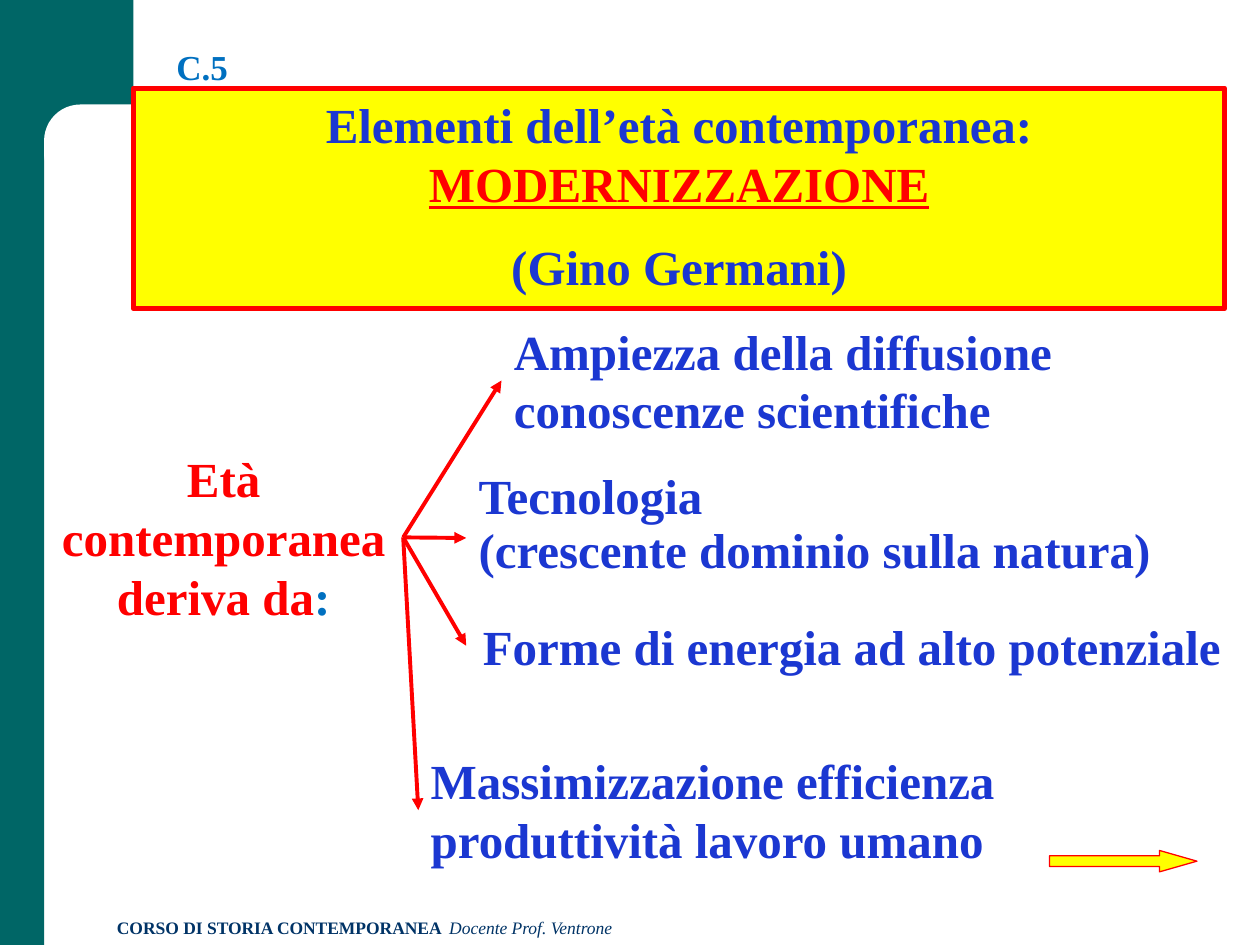
from lxml.etree import SubElement
from pptx import Presentation
from pptx.dml.color import RGBColor
from pptx.enum.shapes import MSO_CONNECTOR as Connector, MSO_SHAPE as Shape
from pptx.enum.text import MSO_ANCHOR as Anchor, MSO_AUTO_SIZE as AutoSize, PP_ALIGN as Align
from pptx.oxml.ns import qn
from pptx.util import Inches, Pt

GREEN, WHITE, YELLOW = "006666", "FFFFFF", "FFFF00"
BLUE, RED, SKY, NAVY = "1B37D1", "FF0000", "0070C0", "003366"
COLS, ROWS = 100, 75


def color(value):
    return RGBColor.from_string(value)


class Deck:
    font = "Times New Roman"
    size = 28

    def __init__(self):
        self.prs = Presentation()
        self.prs.slide_width, self.prs.slide_height = Inches(10), Inches(7.5)
        self.cell_w = self.prs.slide_width / COLS
        self.cell_h = self.prs.slide_height / ROWS
        self.slide = self.prs.slides.add_slide(self.prs.slide_layouts[5])

    def place(self, col, row, cols, rows):
        return (round(col * self.cell_w), round(row * self.cell_h),
                round(cols * self.cell_w), round(rows * self.cell_h))

    def set_text(self, shape, paragraphs, size=None, align=Align.LEFT, spacing=None,
                 anchor=Anchor.TOP, wrap=True):
        """Each paragraph is a list of (text, colour, style letters b, i, u)."""
        size = size or self.size
        frame = shape.text_frame
        frame.auto_size, frame.word_wrap = AutoSize.NONE, wrap
        frame.vertical_anchor = anchor
        for i, runs in enumerate(paragraphs):
            paragraph = frame.add_paragraph() if i else frame.paragraphs[0]
            paragraph.alignment = align
            paragraph.space_before = Pt(size / 2 if i else 0)
            if spacing:
                paragraph.line_spacing = spacing
            for text, fill, style in runs:
                run = paragraph.add_run()
                run.text = text
                font = run.font
                font.name, font.size = self.font, Pt(size)
                font.bold, font.italic = "b" in style, "i" in style
                font.underline = "u" in style
                font.color.rgb = color(fill)

    def title(self, area, text):
        title = self.slide.shapes.title
        title.left, title.top, title.width, title.height = self.place(*area)
        self.set_text(title, [[(text, SKY, "b")]], 20, spacing=0.9, anchor=Anchor.BOTTOM)

    def shape(self, kind, area, fill, line=None, width=0.75, adjust=()):
        shape = self.slide.shapes.add_shape(kind, *self.place(*area))
        shape.shadow.inherit = False
        shape.fill.solid()
        shape.fill.fore_color.rgb = color(fill)
        if line:
            shape.line.color.rgb = color(line)
            shape.line.width = Pt(width)
        else:
            shape.line.fill.background()
        for i, value in enumerate(adjust):
            shape.adjustments[i] = value
        return shape

    def text(self, area, paragraphs, **style):
        box = self.slide.shapes.add_textbox(*self.place(*area))
        self.set_text(box, paragraphs, **style)
        return box

    def arrow(self, start, end):
        arrow = self.slide.shapes.add_connector(Connector.STRAIGHT, 0, 0, 0, 0)
        arrow.begin_connect(start, 3)
        arrow.end_connect(end, 1)
        arrow.line.color.rgb = color(RED)
        arrow.line.width = Pt(2.25)
        properties = arrow.element.spPr
        SubElement(properties.find(qn("a:ln")), qn("a:tailEnd"), type="triangle")
        SubElement(properties, qn("a:effectLst"))


def main():
    deck = Deck()

    # Green frame with a rounded inner corner
    deck.shape(Shape.RECTANGLE, (0, 0, 3.5, ROWS), GREEN)
    deck.shape(Shape.RECTANGLE, (0, 0, 10.6, 11.7), GREEN)
    deck.shape(Shape.ROUNDED_RECTANGLE, (3.5, 8.3, 60.6, 6.7), WHITE, adjust=[0.43])

    # Footer and slide number
    deck.text((8.3, 72.3, 61.7, 2.7),
              [[("CORSO DI STORIA CONTEMPORANEA ", NAVY, "b"),
                (" Docente Prof. Ventrone", NAVY, "i")]], size=10)
    deck.title((13, 0, 12.6, 7.5), "C.5")

    # Heading panel
    heading = deck.shape(Shape.RECTANGLE, (10.6, 7, 86.6, 17.5), YELLOW, RED, 3)
    deck.set_text(heading, [[("Elementi dell’età contemporanea: ", BLUE, "b"),
                             ("MODERNIZZAZIONE", RED, "bu")],
                            [("(Gino Germani)", BLUE, "b")]], align=Align.CENTER)

    # Origin and the four factors it derives from
    origin = deck.text((3.5, 35.1, 28.5, 15.1),
                       [[("Età contemporanea deriva da", RED, "b"), (":", SKY, "b")]],
                       align=Align.CENTER)
    factors = [
        ((39.8, 25, 55.2, 10.4), ["Ampiezza della diffusione conoscenze scientifiche"], {}),
        ((37, 38.5, 59.5, 8.4), ["Tecnologia", "(crescente dominio sulla natura)"],
         {"spacing": 0.5}),
        ((37, 48.4, 61.2, 5.7), ["Forme di energia ad alto potenziale"],
         {"align": Align.CENTER, "wrap": False}),
        ((33.2, 59.1, 64.2, 10.4), ["Massimizzazione efficienza produttività lavoro umano"], {}),
    ]
    for area, lines, style in factors:
        factor = deck.text(area, [[(line, BLUE, "b")] for line in lines], **style)
        deck.arrow(origin, factor)

    # Pointer to the next slide
    deck.shape(Shape.RIGHT_ARROW, (83.3, 67.5, 11.7, 1.7), YELLOW, RED, adjust=[0.5, 1.75])

    deck.prs.save("out.pptx")


if __name__ == "__main__":
    main()
